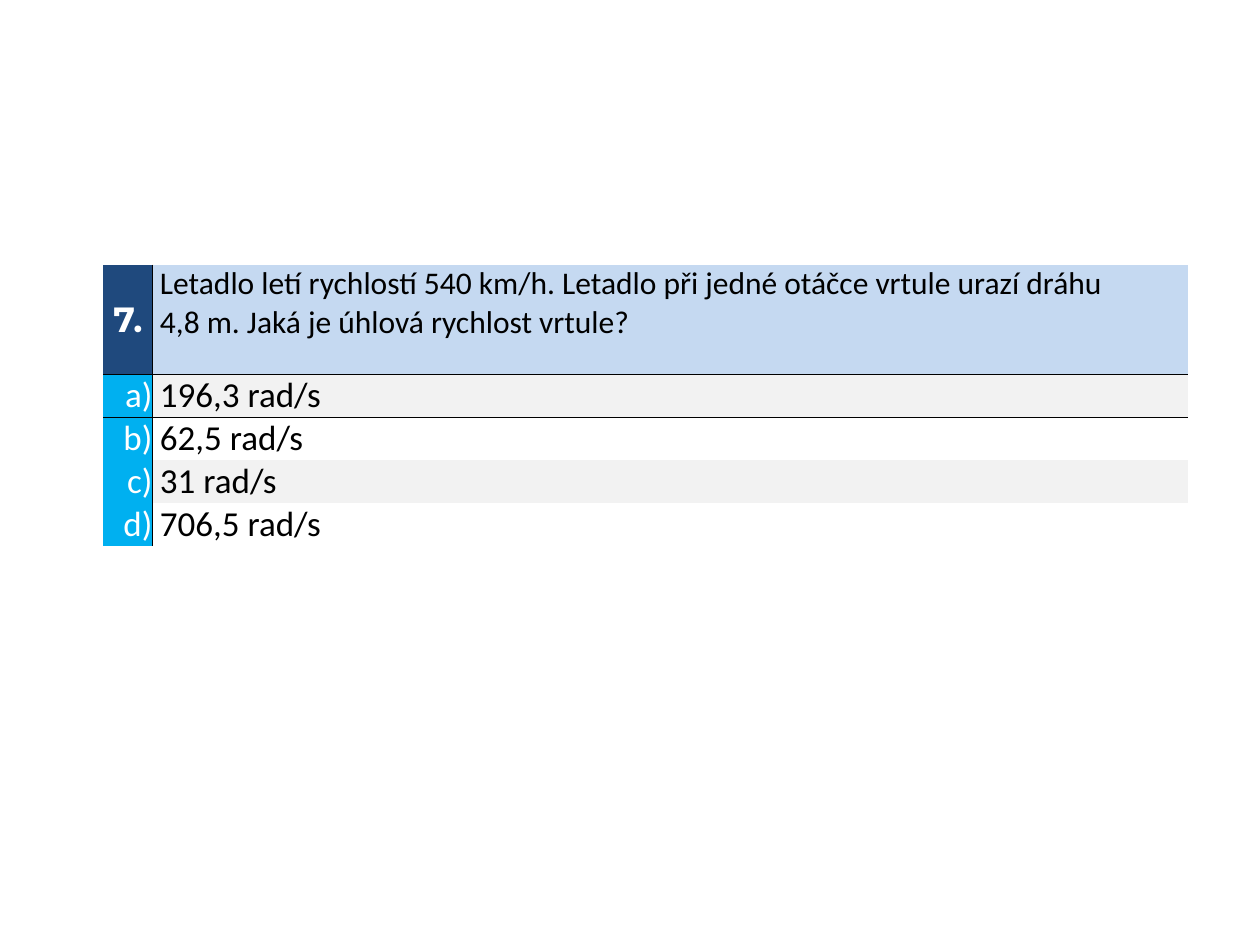
from lxml import etree
from pptx import Presentation
from pptx.dml.color import RGBColor
from pptx.enum import text
from pptx.oxml import ns
from pptx.util import Inches, Pt

COLORS = {
    "navy": "1F497D",
    "pale_blue": "C5D9F1",
    "cyan": "00B0F0",
    "grey": "F2F2F2",
    "white": "FFFFFF",
    "black": "000000",
}
NO_STYLE_NO_GRID = "{2D5ABB26-0587-4C30-8999-92F81FD0307C}"
NUMBER = "7."
QUESTION = [
    "Letadlo letí rychlostí 540 km/h. Letadlo při jedné otáčce vrtule urazí dráhu",
    "4,8 m. Jaká je úhlová rychlost vrtule?",
]
ANSWERS = ["196,3 rad/s", "62,5 rad/s", "31 rad/s", "706,5 rad/s"]
COLUMN_WIDTHS = [0.39, 8.22]
QUESTION_HEIGHT, ANSWER_HEIGHT = 0.87, 0.34


def rgb(name):
    return RGBColor.from_string(COLORS[name])


def add_borders(cell, sides):
    """Draw thin black lines on the given sides, in the order L, R, T, B."""
    properties = cell._tc.get_or_add_tcPr()
    for side in sides:
        line = etree.SubElement(properties, ns.qn(f"a:ln{side}"), w=str(Pt(0.5)))
        fill = etree.SubElement(line, ns.qn("a:solidFill"))
        etree.SubElement(fill, ns.qn("a:srgbClr"), val=COLORS["black"])


def fill_cell(cell, lines, anchor, fill=None, borders="", color="black", size=20,
              align=text.PP_ALIGN.LEFT, font="Calibri", bold=False, indent=0):
    add_borders(cell, borders)
    if fill:
        cell.fill.solid()
        cell.fill.fore_color.rgb = rgb(fill)
    else:
        cell.fill.background()
    cell.margin_left = Inches(indent)
    cell.margin_right = cell.margin_top = cell.margin_bottom = 0
    cell.vertical_anchor = anchor
    cell.text = "\n".join(lines)
    for paragraph in cell.text_frame.paragraphs:
        paragraph.alignment = align
        paragraph.font.name = font
        paragraph.font.size = Pt(size)
        paragraph.font.bold = bold
        paragraph.font.color.rgb = rgb(color)


def add_quiz_table(slide):
    height = QUESTION_HEIGHT + ANSWER_HEIGHT * len(ANSWERS)
    quiz = slide.shapes.add_table(
        len(ANSWERS) + 1, 2, Inches(0.82), Inches(2.1),
        Inches(sum(COLUMN_WIDTHS)), Inches(height)).table
    quiz.first_row = quiz.horz_banding = False
    quiz._tbl.tblPr.find(ns.qn("a:tableStyleId")).text = NO_STYLE_NO_GRID
    for column, width in zip(quiz.columns, COLUMN_WIDTHS):
        column.width = Inches(width)
    for index, row in enumerate(quiz.rows):
        row.height = Inches(ANSWER_HEIGHT if index else QUESTION_HEIGHT)
    return quiz


def add_question(quiz):
    fill_cell(quiz.cell(0, 0), [NUMBER], text.MSO_ANCHOR.MIDDLE, "navy", "RB",
              "white", align=text.PP_ALIGN.CENTER, font="Montserrat", bold=True)
    fill_cell(quiz.cell(0, 1), QUESTION, text.MSO_ANCHOR.TOP, "pale_blue", "LB",
              size=18, indent=0.06)


def add_answers(quiz):
    for row, (letter, answer) in enumerate(zip("abcd", ANSWERS), start=1):
        top = "T" if row == 1 else ""
        fill_cell(quiz.cell(row, 0), [f"{letter})"], text.MSO_ANCHOR.MIDDLE,
                  "cyan", "R" + top, "white", align=text.PP_ALIGN.RIGHT)
        fill_cell(quiz.cell(row, 1), [answer], text.MSO_ANCHOR.BOTTOM,
                  "grey" if row % 2 else None, "L" + top, indent=0.06)


def main():
    deck = Presentation()
    deck.slide_width, deck.slide_height = Inches(10), Inches(7.5)
    slide = deck.slides.add_slide(deck.slide_layouts[6])
    quiz = add_quiz_table(slide)
    add_question(quiz)
    add_answers(quiz)
    deck.save("out.pptx")


if __name__ == "__main__":
    main()
